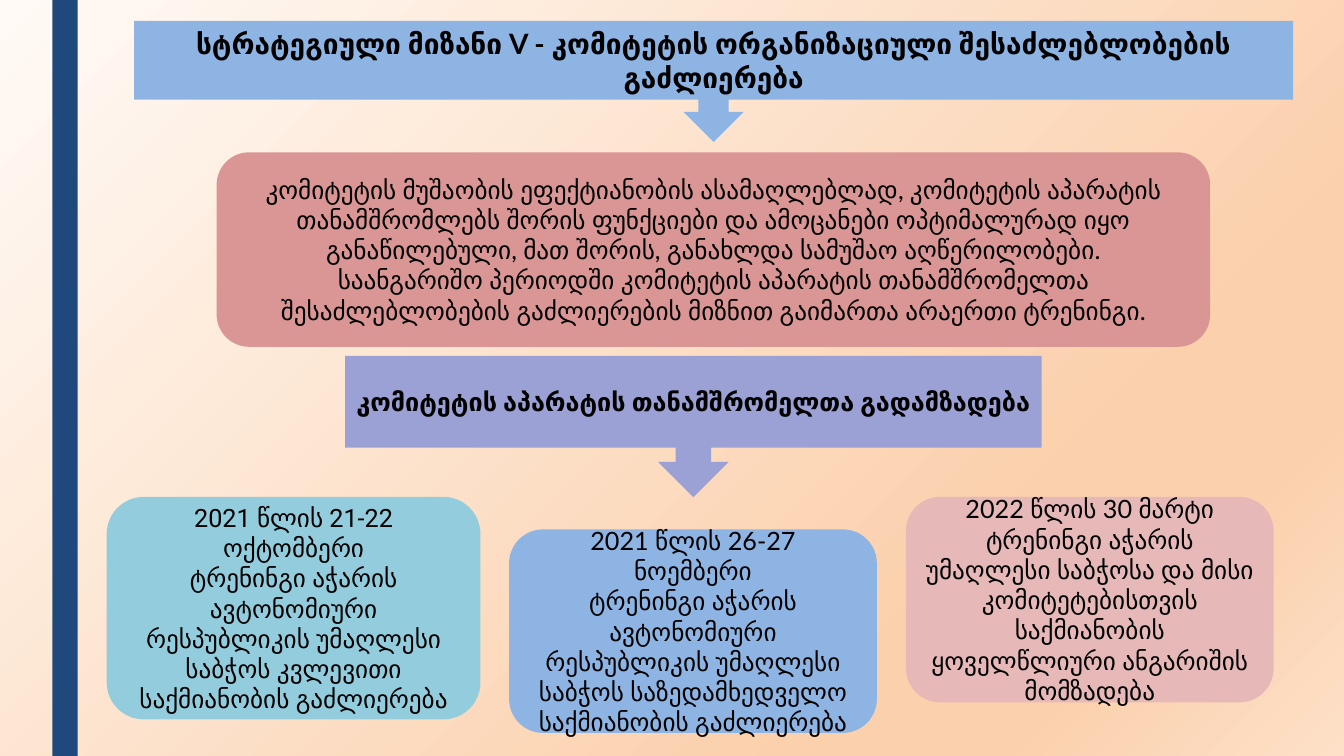
from copy import deepcopy

from pptx import Presentation
from pptx.dml.color import RGBColor
from pptx.enum.shapes import MSO_SHAPE
from pptx.enum.text import MSO_ANCHOR, PP_ALIGN
from pptx.oxml.ns import qn
from pptx.util import Cm, Pt

RECTANGLE = MSO_SHAPE.RECTANGLE
CALLOUT = MSO_SHAPE.DOWN_ARROW_CALLOUT
ROUNDED = MSO_SHAPE.ROUNDED_RECTANGLE
MIDDLE = MSO_ANCHOR.MIDDLE
CENTER = PP_ALIGN.CENTER

COLORS = {
    "text": "000000",
    "bar": "1F497D",
    "blue": "8EB4E3",
    "violet": "9BA1D5",
    "red": "D99694",
    "teal": "93CDDD",
    "pink": "E6B9B8",
    "cream": "FFFAF6",
    "peach": "FBD0AC",
    "light_peach": "FDE0C7",
}
BACKGROUND_STOPS = [(0, "cream"), (0.74, "peach"), (0.83, "peach"), (1, "light_peach")]


def add_filled_shape(kind, left, top, width, height, color):
    shape = slide.shapes.add_shape(kind, Cm(left), Cm(top), Cm(width), Cm(height))
    shape.shadow.inherit = False
    shape.fill.solid()
    shape.fill.fore_color.rgb = RGBColor.from_string(COLORS[color])
    shape.line.fill.background()
    return shape


presentation = Presentation()
presentation.slide_width = Cm(33.87)
presentation.slide_height = Cm(19.05)
slide = presentation.slides.add_slide(presentation.slide_layouts[6])

# Diagonal background gradient
background = slide.background.fill
background.gradient()
background.gradient_angle = 315
stop_list = slide.element.find(".//" + qn("a:gsLst"))
while len(stop_list) < len(BACKGROUND_STOPS):
    stop_list.append(deepcopy(stop_list[0]))
for stop, (position, color) in zip(background.gradient_stops, BACKGROUND_STOPS):
    stop.position = position
    stop.color.rgb = RGBColor.from_string(COLORS[color])

add_filled_shape(RECTANGLE, 1.32, 0, 0.64, 19.05, "bar")

# Kind, left, top, width, height, fill, text size, bold, paragraphs
BOXES = [
    (CALLOUT, 3.38, 0.53, 29.21, 3.05, "blue", 20, True, [
        "სტრატეგიული მიზანი V - კომიტეტის ორგანიზაციული შესაძლებლობების გაძლიერება",
    ]),
    (CALLOUT, 8.7, 8.97, 17.55, 3.56, "violet", 18, True, [
        "კომიტეტის აპარატის თანამშრომელთა გადამზადება",
    ]),
    (ROUNDED, 22.83, 12.52, 9.27, 5.18, "pink", 18, False, [
        "2022 წლის 30 მარტი",
        "ტრენინგი აჭარის უმაღლესი საბჭოსა და მისი კომიტეტებისთვის საქმიანობის "
        "ყოველწლიური ანგარიშის მომზადება",
    ]),
    (ROUNDED, 5.46, 3.84, 25.04, 4.9, "red", 18, False, [
        "კომიტეტის მუშაობის ეფექტიანობის ასამაღლებლად, კომიტეტის აპარატის "
        "თანამშრომლებს შორის ფუნქციები და ამოცანები ოპტიმალურად იყო "
        "განაწილებული, მათ შორის, განახლდა სამუშაო აღწერილობები.",
        "საანგარიშო პერიოდში კომიტეტის აპარატის თანამშრომელთა "
        "შესაძლებლობების გაძლიერების მიზნით გაიმართა არაერთი ტრენინგი.",
    ]),
    (ROUNDED, 2.69, 12.52, 9.42, 5.61, "teal", 18, False, [
        "2021 წლის 21-22",
        "ტრენინგი აჭარის ავტონომიური რესპუბლიკის უმაღლესი საბჭოს კვლევითი "
        "საქმიანობის გაძლიერება",
    ]),
    (ROUNDED, 12.83, 13.34, 9.27, 5.13, "blue", 18, False, [
        "2021 წლის 26-27 ნოემბერი",
        "ტრენინგი აჭარის ავტონომიური რესპუბლიკის უმაღლესი საბჭოს "
        "საზედამხედველო საქმიანობის გაძლიერება",
    ]),
]

for kind, left, top, width, height, color, size, bold, paragraphs in BOXES:
    shape = add_filled_shape(kind, left, top, width, height, color)
    text_frame = shape.text_frame
    text_frame.word_wrap = True
    text_frame.vertical_anchor = MIDDLE
    text_frame.text = "\n".join(paragraphs)
    if color == "teal":
        text_frame.paragraphs[0].add_run().text = " ოქტომბერი"
    for paragraph in text_frame.paragraphs:
        paragraph.alignment = CENTER
        for run in paragraph.runs:
            run.font.name = "Lato"
            run.font.size = Pt(size)
            run.font.bold = bold
            run.font.color.rgb = RGBColor.from_string(COLORS["text"])
    if color == "teal":
        text_frame.paragraphs[0].runs[0].font.name = "Roboto"

presentation.save("out.pptx")
